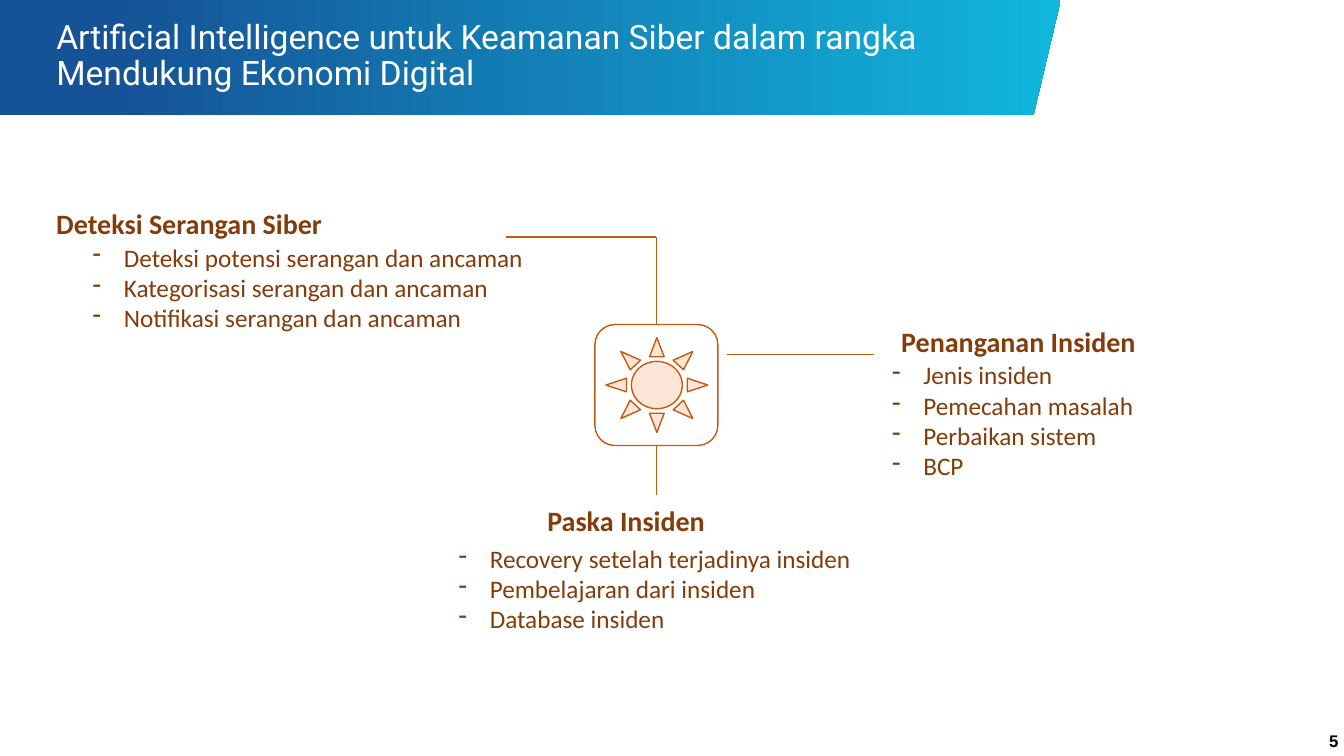
from dataclasses import dataclass

import pptx
import pptx.dml.color
import pptx.enum.shapes
import pptx.enum.text
import pptx.oxml
import pptx.oxml.ns
import pptx.util

Inches = pptx.util.Inches
Pt = pptx.util.Pt
MSO_SHAPE = pptx.enum.shapes.MSO_SHAPE

ORANGE = "C55A11"
BROWN = "843C0B"
PEACH = "FBE5D6"
AXIS = 6.51  # vertical line through the middle of the icon frame
ELBOW_TOP = 2.35


@dataclass
class Box:
    left: float
    top: float
    width: float
    height: float

    def lengths(self):
        return [Inches(v) for v in (self.left, self.top, self.width, self.height)]


@dataclass
class Phase:
    heading: str
    heading_box: Box
    items: list[str]
    items_box: Box


@dataclass
class TextStyle:
    size: float
    font: str
    color: str
    bold: bool = False


HEADING = TextStyle(20, "Calibri", BROWN, True)
ITEM = TextStyle(18, "Calibri", BROWN)

PHASES = [
    Phase("Deteksi Serangan Siber", Box(0.46, 2, 2.86, 0.44),
          ["Deteksi potensi serangan dan ancaman",
           "Kategorisasi serangan dan ancaman",
           "Notifikasi serangan dan ancaman"],
          Box(0.82, 2.35, 4.52, 1.01)),
    Phase("Penanganan Insiden", Box(8.84, 3.17, 2.55, 0.44),
          ["Jenis insiden", "Pemecahan masalah", "Perbaikan sistem", "BCP"],
          Box(8.75, 3.52, 2.62, 1.31)),
    Phase("Paska Insiden", Box(5.33, 4.95, 1.78, 0.44),
          ["Recovery setelah terjadinya insiden",
           "Pembelajaran dari insiden",
           "Database insiden"],
          Box(4.45, 5.34, 4.14, 1.01)),
]


def rgb(color: str):
    return pptx.dml.color.RGBColor.from_string(color)


def add_dash(paragraph) -> None:
    """Give the paragraph a hanging dash as its bullet."""
    properties = paragraph._p.get_or_add_pPr()
    properties.set("marL", str(Inches(0.31)))
    properties.set("indent", str(-Inches(0.31)))
    bullet = pptx.oxml.parse_xml(
        f'<a:buChar {pptx.oxml.ns.nsdecls("a")} char="-"/>')
    properties.append(bullet)


def add_text(slide, box: Box, lines: list[str], style: TextStyle, dashed: bool = False):
    frame = slide.shapes.add_textbox(*box.lengths()).text_frame
    frame.word_wrap = True
    frame.text = "\n".join(lines)
    for paragraph in frame.paragraphs:
        if dashed:
            add_dash(paragraph)
        for run in paragraph.runs:
            run.font.size = Pt(style.size)
            run.font.name = style.font
            run.font.bold = style.bold
            run.font.color.rgb = rgb(style.color)
    return frame


def add_outlined(slide, preset, box: Box, fill: str | None = None):
    shape = slide.shapes.add_shape(preset, *box.lengths())
    shape.shadow.inherit = False
    if fill:
        shape.fill.solid()
        shape.fill.fore_color.rgb = rgb(fill)
    else:
        shape.fill.background()
    shape.line.color.rgb = rgb(ORANGE)
    shape.line.width = Pt(1)
    return shape


def add_line(slide, start: tuple[float, float], end: tuple[float, float]):
    line = slide.shapes.add_connector(
        pptx.enum.shapes.MSO_CONNECTOR.STRAIGHT,
        *[Inches(v) for v in (*start, *end)])
    line.line.color.rgb = rgb(ORANGE)
    line.line.width = Pt(1)
    line._element.spPr.append(
        pptx.oxml.parse_xml(f'<a:effectLst {pptx.oxml.ns.nsdecls("a")}/>'))
    return line


def add_banner(slide) -> None:
    corners = [(0, 0), (10.52, 0), (10.25, 1.14), (0, 1.14)]
    points = [(Inches(x), Inches(y)) for x, y in corners]
    builder = slide.shapes.build_freeform(*points[0])
    builder.add_line_segments(points[1:], close=True)
    banner = builder.convert_to_shape()
    banner.shadow.inherit = False
    banner.line.fill.background()
    banner.fill.gradient()
    banner.fill.gradient_angle = 0
    stops = [(0.1, "155296"), (1, "11B6DD")]
    for stop, (position, color) in zip(banner.fill.gradient_stops, stops):
        stop.position = position
        stop.color.rgb = rgb(color)

    title = add_text(
        slide, Box(0.46, 0, 9.81, 1.13),
        ["Artificial Intelligence untuk Keamanan Siber dalam rangka "
         "Mendukung Ekonomi Digital"],
        TextStyle(24, "Roboto", "FFFFFF"))
    title.vertical_anchor = pptx.enum.text.MSO_ANCHOR.MIDDLE
    title.paragraphs[0].line_spacing = 0.9


def add_hub(slide) -> None:
    """Draw the framed sun and the lines that lead to the phases."""
    add_outlined(slide, MSO_SHAPE.SUN, Box(6.01, 3.35, 1.01, 0.94), PEACH)
    frame = add_outlined(slide, MSO_SHAPE.ROUNDED_RECTANGLE,
                         Box(5.9, 3.22, 1.22, 1.2))
    to_detection = add_line(slide, (AXIS, 3.22), (AXIS, ELBOW_TOP))
    to_detection.begin_connect(frame, 0)
    add_line(slide, (AXIS, ELBOW_TOP), (5.02, ELBOW_TOP))
    add_line(slide, (7.21, 3.52), (8.67, 3.52))
    to_aftermath = add_line(slide, (AXIS, 4.42), (AXIS, 4.91))
    to_aftermath.begin_connect(frame, 2)


def main() -> None:
    deck = pptx.Presentation()
    deck.slide_width = Inches(13.33)
    deck.slide_height = Inches(7.5)
    slide = deck.slides.add_slide(deck.slide_layouts[6])

    add_banner(slide)
    add_hub(slide)
    for phase in PHASES:
        add_text(slide, phase.items_box, phase.items, ITEM, dashed=True)
        add_text(slide, phase.heading_box, [phase.heading], HEADING)

    page_number = add_text(slide, Box(12.9, 7.2, 0.66, 0.3), ["5"],
                           TextStyle(12, "Arial", "000000", True))
    page_number.paragraphs[0].alignment = pptx.enum.text.PP_ALIGN.CENTER

    deck.save("out.pptx")


if __name__ == "__main__":
    main()
